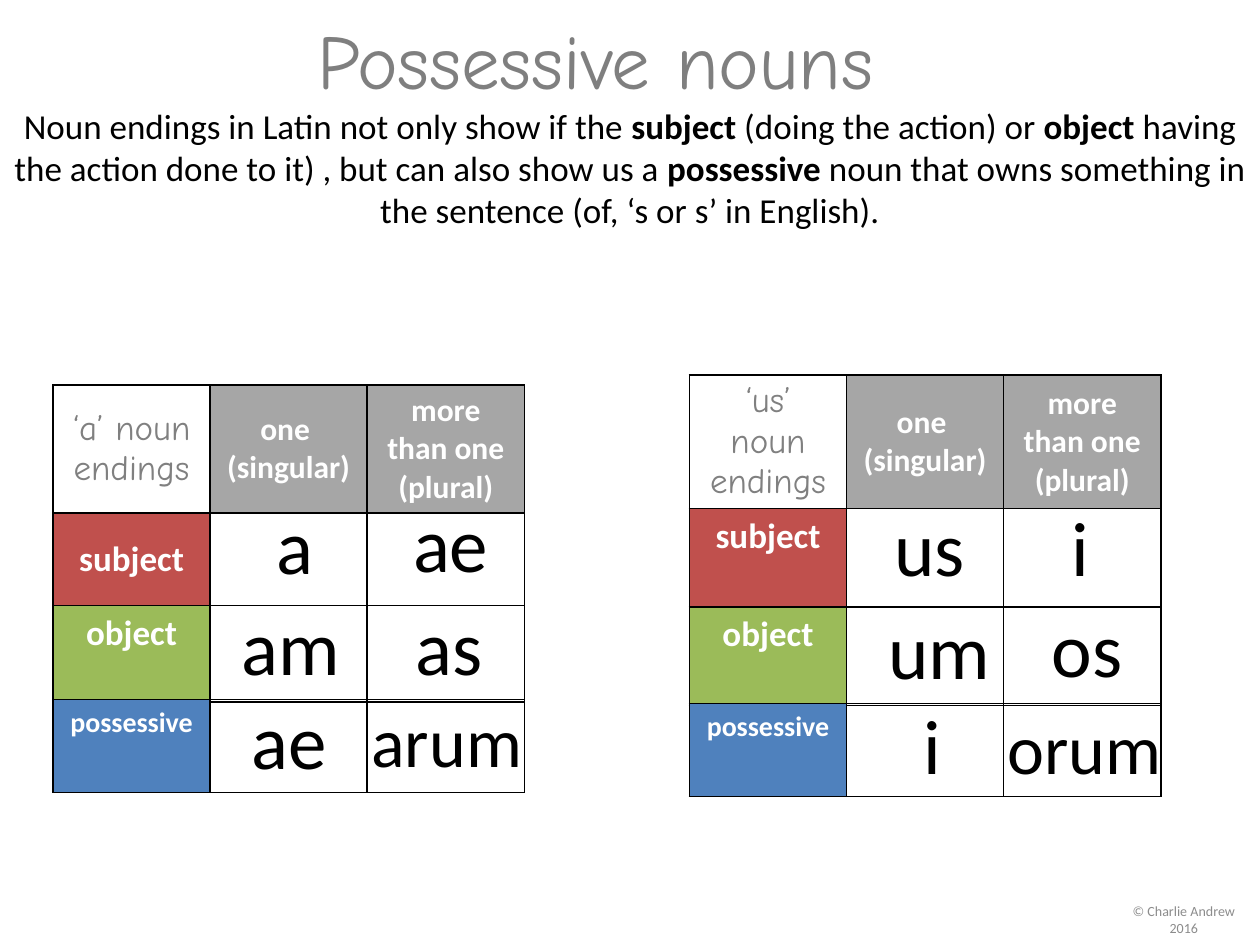
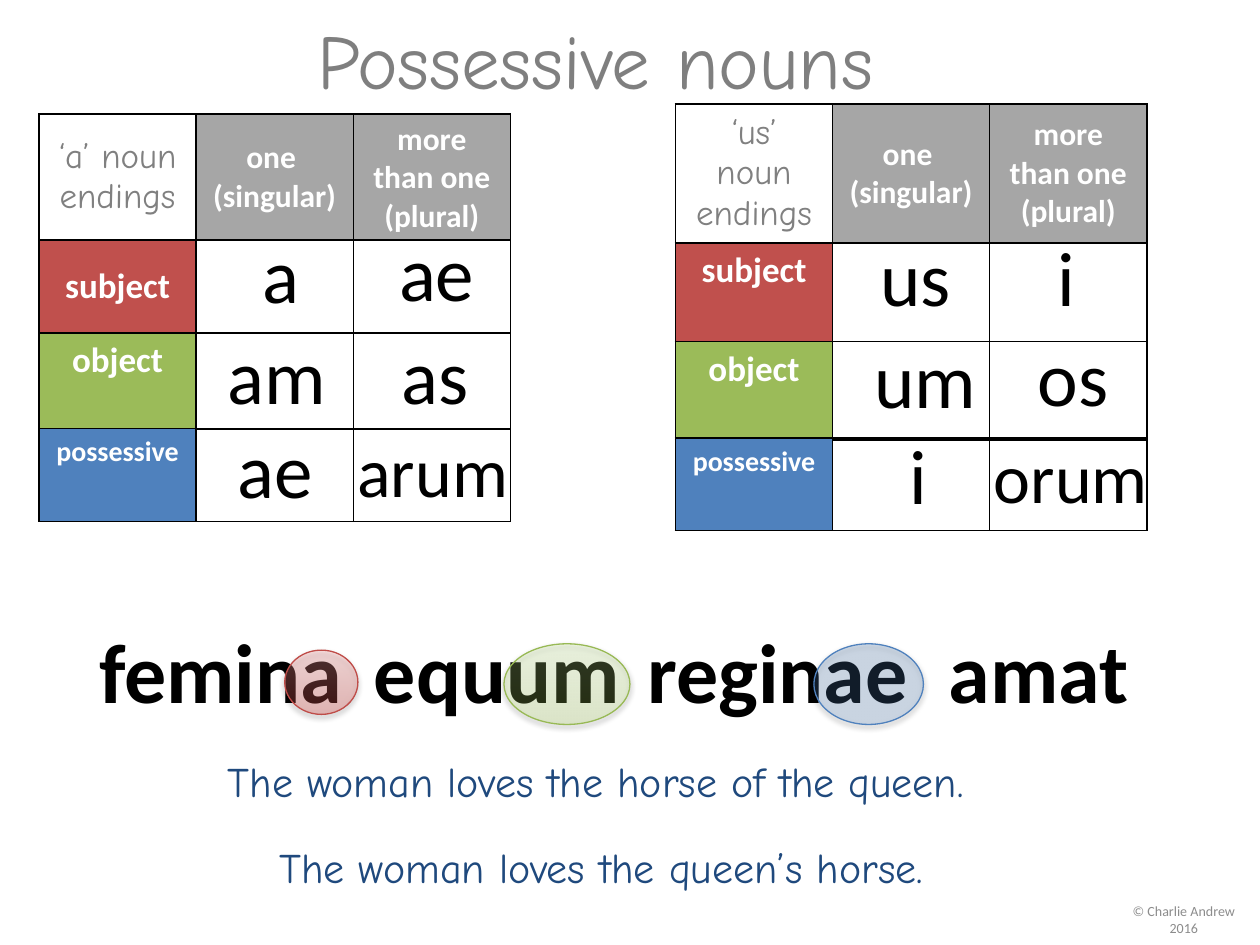
from pptx import Presentation
from pptx.dml.color import RGBColor
from pptx.enum.shapes import MSO_SHAPE
from pptx.enum.text import MSO_ANCHOR, MSO_AUTO_SIZE, PP_ALIGN
from pptx.oxml import parse_xml
from pptx.oxml.ns import nsdecls, qn
from pptx.util import Pt

BLACK = RGBColor(0x00, 0x00, 0x00)
WHITE = RGBColor(0xFF, 0xFF, 0xFF)
TITLE_GREY = RGBColor(0x7F, 0x7F, 0x7F)
CORNER_GREY = RGBColor(0x80, 0x80, 0x80)
FOOTER_GREY = RGBColor(0x8C, 0x8C, 0x8C)
HEADER_GREY = RGBColor(0xA6, 0xA6, 0xA6)
SUBJECT_RED = RGBColor(0xC0, 0x50, 0x4D)
OBJECT_GREEN = RGBColor(0x9B, 0xBB, 0x59)
POSSESSIVE_BLUE = RGBColor(0x4F, 0x81, 0xBD)
TRANSLATION_BLUE = RGBColor(0x1F, 0x49, 0x7D)
BODY, HAND = "Calibri", "Comic Neue"
COLUMN = 89.8


def add_text(slide, text, x, y, w, h, size, font=BODY, color=BLACK, bold=False, wrap=False):
    tf = slide.shapes.add_textbox(Pt(x), Pt(y), Pt(w), Pt(h)).text_frame
    tf.word_wrap = wrap
    tf.auto_size = MSO_AUTO_SIZE.NONE if wrap else MSO_AUTO_SIZE.SHAPE_TO_FIT_TEXT
    p = tf.paragraphs[0]
    p.text = text
    p.font.size, p.font.name, p.font.bold = Pt(size), font, bold
    p.font.color.rgb = color
    return tf


def add_endings_table(slide, x, y, heights, rows):
    """Each cell is None or (text, size, font, text colour, fill, anchor)."""
    table = slide.shapes.add_table(
        len(rows), 3, Pt(x), Pt(y), Pt(3 * COLUMN), Pt(sum(heights))).table
    table.first_row = table.horz_banding = False
    for column in table.columns:
        column.width = Pt(COLUMN)
    for r, (height, row) in enumerate(zip(heights, rows)):
        table.rows[r].height = Pt(height)
        for c, content in enumerate(row):
            cell = table.cell(r, c)
            cell.fill.background()
            if content:
                text, size, font, color, fill, anchor = content
                cell.text, cell.vertical_anchor = text, anchor
                if fill:
                    cell.fill.solid()
                    cell.fill.fore_color.rgb = fill
                for p in cell.text_frame.paragraphs:
                    p.alignment = PP_ALIGN.CENTER
                    p.font.size, p.font.name, p.font.bold = Pt(size), font, font == BODY
                    p.font.color.rgb = color
            tcPr = cell._tc.get_or_add_tcPr()
            for i, side in enumerate("LRTB"):
                tcPr.insert(i, parse_xml(
                    f'<a:ln{side} {nsdecls("a")} w="12700"><a:solidFill>'
                    f'<a:srgbClr val="{BLACK}"/></a:solidFill></a:ln{side}>'))


prs = Presentation()
prs.slide_width, prs.slide_height = Pt(720), Pt(540)
intro_slide, example_slide = [prs.slides.add_slide(prs.slide_layouts[6]) for _ in range(2)]

# Noun: x, table y, subject anchor, row heights, y of possessive row
NOUNS = {
    "a": (30.3, 220, MSO_ANCHOR.MIDDLE, (53, 55), 399.8),
    "us": (394, 214.3, MSO_ANCHOR.TOP, (56.3, 56.3), 403.3),
}
# Ending, x, y, width, size
ENDINGS = [
    ("a", 151.2, 280.8, 36, 44), ("ae", 229, 279.4, 57.6, 44),
    ("am", 131, 338.4, 71.3, 44), ("as", 230.4, 338.4, 53.3, 44),
    ("ae", 136.8, 392.4, 57.6, 44), ("arum", 205.2, 395.3, 101.5, 40),
    ("us", 504, 282.2, 55.4, 44), ("i", 605.5, 282.2, 24.5, 44),
    ("um", 500.4, 340.6, 73.4, 44), ("os", 594, 339.8, 55.4, 44),
    ("i", 520.6, 395.3, 24.5, 44), ("orum", 568.8, 398.9, 103.7, 40),
]

# Shared by both slides: title, tables, endings, footer
for s, dx, dy, us_header in ((intro_slide, 0, 0, 76), (example_slide, -8, -154.8, 79)):
    tf = add_text(s, "Possessive nouns", 174.2, 2.2, 420.5, 62.6, 44, HAND, TITLE_GREY, wrap=True)
    tf.vertical_anchor = MSO_ANCHOR.MIDDLE
    for noun, (x, y, anchor, heights, possessive_y) in NOUNS.items():
        header = us_header if noun == "us" else 72
        possessive_shift = us_header - 76 - 1.2 if noun == "us" else 0
        middle = MSO_ANCHOR.MIDDLE
        add_endings_table(s, x + dx, y + dy, (header, *heights), [
            [(f"‘{noun}’ noun endings", 20, HAND, CORNER_GREY, None, middle),
             ("one \n(singular)", 18, BODY, WHITE, HEADER_GREY, middle),
             ("more than one (plural)", 18, BODY, WHITE, HEADER_GREY, middle)],
            [("subject", 20, BODY, WHITE, SUBJECT_RED, anchor), None, None],
            [("object", 20, BODY, WHITE, OBJECT_GREEN, MSO_ANCHOR.TOP), None, None],
        ])
        add_endings_table(s, x + dx, possessive_y + dy + possessive_shift, (53,), [
            [("possessive", 16, BODY, WHITE, POSSESSIVE_BLUE, MSO_ANCHOR.TOP), None, None],
        ])
    for ending, x, y, w, size in ENDINGS:
        add_text(s, ending, x + dx, y + dy, w, 60.5 if size == 44 else 55.4, size)
    tf = add_text(s, "© Charlie Andrew 2016", 631.5, 511.2, 90, 28.8, 8, color=FOOTER_GREY, wrap=True)
    tf.vertical_anchor = MSO_ANCHOR.MIDDLE
    tf.paragraphs[0].alignment = PP_ALIGN.CENTER

# Explanation, with every second run in bold
tf = add_text(intro_slide, "", 0, 56.2, 720, 80, 20, wrap=True)
p = tf.paragraphs[0]
p.alignment = PP_ALIGN.CENTER
explanation = (
    "Noun endings in Latin not only show if the ", "subject",
    " (doing the action) or ", "object",
    " having the action done to it) , but can also show us a ", "possessive",
    " noun that owns something in the sentence (of, ‘s or s’ in English).",
)
for i, text in enumerate(explanation):
    r = p.add_run()
    r.text = text
    r.font.size, r.font.name, r.font.bold = Pt(20), BODY, i % 2 == 1
    r.font.color.rgb = BLACK

# Example sentence and its translations
for word, x, w in (("femina", 49.7, 155.5), ("equum", 206.6, 156.2),
                   ("reginae", 362.9, 165.6), ("amat", 535, 118.8)):
    add_text(example_slide, word, x, 350.6, w, 65.5, 48, bold=True)
for sentence, x, y, w in (
        ("The woman loves the horse of the queen.", 123.1, 428.4, 475.2),
        ("The woman loves the queen’s horse.", 152.6, 477.4, 412.6)):
    add_text(example_slide, sentence, x, y, w, 36, 24, HAND, TRANSLATION_BLUE)

# Ovals that mark the endings: x, y, width, height, fill colours, opacity, line
ENDING_OVALS = [
    (162.7, 371.5, 41.8, 36.7, ("D1403C", "FFA6A5"), 30, "BF4C48"),
    (288, 367.9, 72, 46.1, ("A0CA4A", "DAFFA5"), 22, "98B955"),
    (465.1, 367.9, 62.6, 46.1, ("4F81BD",), 22, "4F81BD"),
]
for x, y, w, h, colors, opacity, line in ENDING_OVALS:
    sp = example_slide.shapes.add_shape(MSO_SHAPE.OVAL, Pt(x), Pt(y), Pt(w), Pt(h))
    if len(colors) == 2:
        sp.fill.gradient()
        sp.fill.gradient_angle = 90
        for stop, color in zip(sp.fill.gradient_stops, colors):
            stop.color.rgb = RGBColor.from_string(color)
    else:
        sp.fill.solid()
        sp.fill.fore_color.rgb = RGBColor.from_string(colors[0])
    spPr = sp._element.spPr
    for clr in spPr.iter(qn("a:srgbClr")):
        clr.append(parse_xml(f'<a:alpha {nsdecls("a")} val="{opacity * 1000}"/>'))
    sp.line.color.rgb = RGBColor.from_string(line)
    sp.line.width = Pt(0.75)
    sp.shadow.inherit = False
    spPr.find(qn("a:effectLst")).append(parse_xml(
        f'<a:outerShdw {nsdecls("a")} blurRad="{Pt(3.1)}" dist="{Pt(1.8)}" dir="5400000" '
        f'rotWithShape="0"><a:srgbClr val="{BLACK}"><a:alpha val="35000"/></a:srgbClr></a:outerShdw>'))

prs.save("out.pptx")
